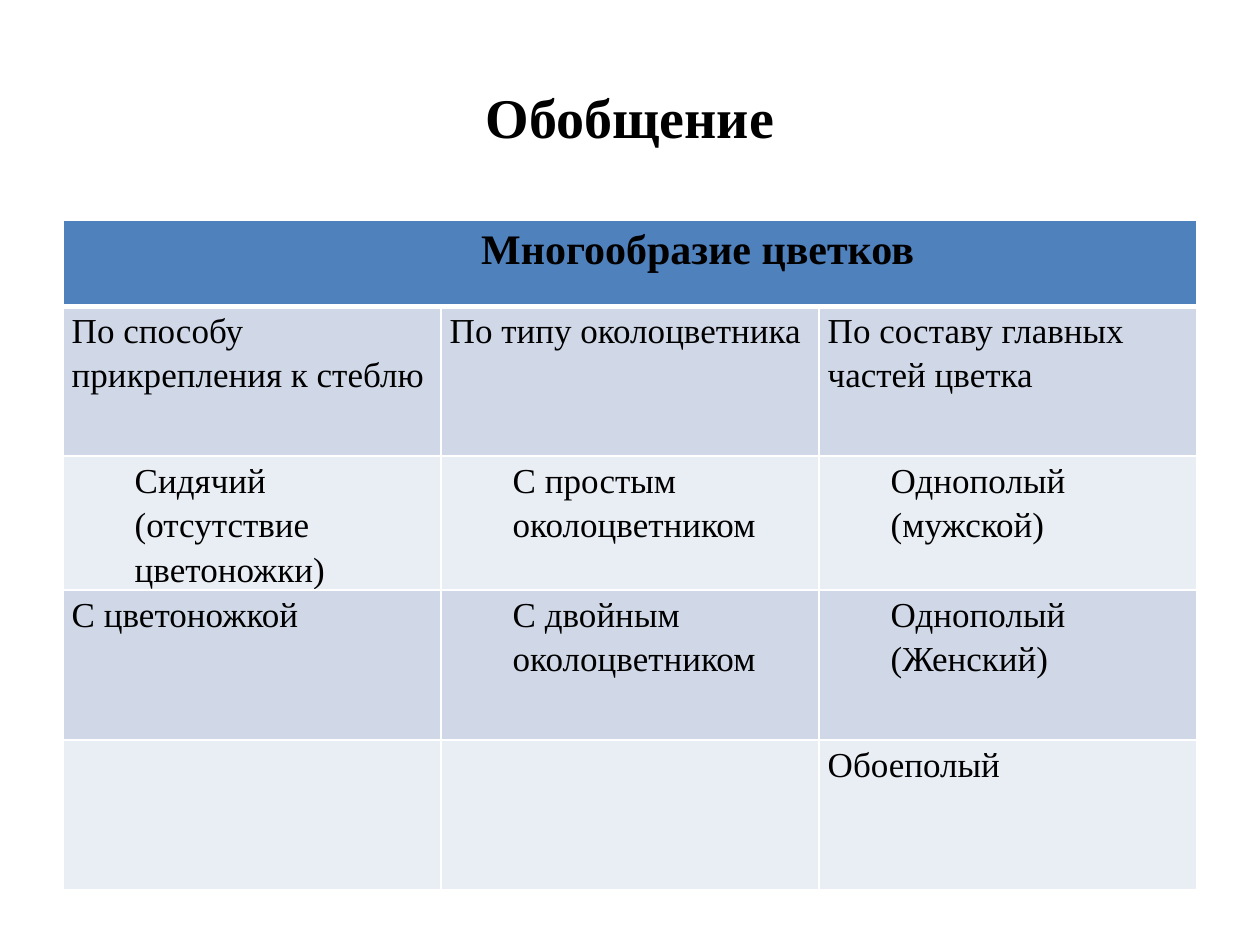
from dataclasses import dataclass

from lxml import etree
from pptx import Presentation
from pptx.dml.color import RGBColor
from pptx.enum.text import MSO_ANCHOR, PP_ALIGN
from pptx.oxml.ns import qn
from pptx.util import Pt

CENTER, JUSTIFY = PP_ALIGN.CENTER, PP_ALIGN.JUSTIFY
MIDDLE = MSO_ANCHOR.MIDDLE
TITLE_ONLY = 5


@dataclass(frozen=True)
class Theme:
    font: str = "Times New Roman"
    title_size: int = 32
    header_size: int = 24
    body_size: int = 20
    text: str = "000000"
    header_fill: str = "4F81BD"
    bands: tuple = ("D0D8E8", "E9EDF4")
    border: str = "FFFFFF"


THEME = Theme()

LEFT, WIDTH = 36, 648
TABLE_TOP = 126
ROW_HEIGHTS = (49, 85.7, 73.4, 85.7, 85.7)
CELL_MARGIN = 5
INDENT = 36
HEADER_FIRST_LINE = 41.3
THIN, THICK = 1, 3

HEADER = "Многообразие цветков"
# Each entry: text, left indent
BODY = (
    (("По способу прикрепления к стеблю", 0),
     ("По типу околоцветника", 0),
     ("По составу главных частей цветка", 0)),
    (("Сидячий (отсутствие цветоножки)", INDENT),
     ("С простым околоцветником", INDENT),
     ("Однополый (мужской)", INDENT)),
    (("С цветоножкой", 0),
     ("С двойным околоцветником", INDENT),
     ("Однополый (Женский)", INDENT)),
    (("", 0), ("", 0), ("Обоеполый", 0)),
)


def style_font(paragraph, size, bold=False):
    font = paragraph.font
    font.name, font.size, font.bold = THEME.font, Pt(size), bold
    font.color.rgb = RGBColor.from_string(THEME.text)


def add_title(slide, text):
    title = slide.shapes.title
    title.left, title.top = Pt(LEFT), Pt(21.6)
    title.width, title.height = Pt(WIDTH), Pt(90)
    title.text_frame.text = text
    title.text_frame.vertical_anchor = MIDDLE
    paragraph = title.text_frame.paragraphs[0]
    paragraph.alignment = CENTER
    style_font(paragraph, THEME.title_size, bold=True)


def set_borders(cell, top, bottom):
    properties = cell._tc.get_or_add_tcPr()
    for side, width in (("L", THIN), ("R", THIN), ("T", top), ("B", bottom)):
        line = etree.SubElement(properties, qn(f"a:ln{side}"), w=str(Pt(width)))
        fill = etree.SubElement(line, qn("a:solidFill"))
        etree.SubElement(fill, qn("a:srgbClr"), val=THEME.border)


def format_cell(cell, color, top=THIN, bottom=THIN):
    cell.margin_left = cell.margin_right = Pt(CELL_MARGIN)
    cell.margin_top = cell.margin_bottom = 0
    set_borders(cell, top, bottom)
    cell.fill.solid()
    cell.fill.fore_color.rgb = RGBColor.from_string(color)


def write_cell(cell, text, size, left=0, first_line=0, bold=False):
    cell.text = text
    paragraph = cell.text_frame.paragraphs[0]
    paragraph.line_spacing = 1.15
    style_font(paragraph, size, bold)
    properties = paragraph._p.get_or_add_pPr()
    properties.set("marL", str(Pt(left)))
    properties.set("indent", str(Pt(first_line)))
    return paragraph


def add_flower_table(slide):
    columns = len(BODY[0])
    table = slide.shapes.add_table(
        len(ROW_HEIGHTS), columns, Pt(LEFT), Pt(TABLE_TOP),
        Pt(WIDTH), Pt(sum(ROW_HEIGHTS))).table
    for row, height in zip(table.rows, ROW_HEIGHTS):
        row.height = Pt(height)

    for column in range(columns):
        format_cell(table.cell(0, column), THEME.header_fill, bottom=THICK)
    header = table.cell(0, 0)
    header.merge(table.cell(0, columns - 1))
    write_cell(header, HEADER, THEME.header_size, INDENT,
               HEADER_FIRST_LINE, bold=True).alignment = CENTER

    for row, entries in enumerate(BODY, start=1):
        band = THEME.bands[(row - 1) % len(THEME.bands)]
        for column, (text, indent) in enumerate(entries):
            cell = table.cell(row, column)
            format_cell(cell, band, top=THICK if row == 1 else THIN)
            if text:
                paragraph = write_cell(cell, text, THEME.body_size, indent)
    paragraph.alignment = JUSTIFY


def main():
    presentation = Presentation()
    presentation.slide_width, presentation.slide_height = Pt(720), Pt(540)
    slide = presentation.slides.add_slide(presentation.slide_layouts[TITLE_ONLY])
    add_title(slide, "Обобщение")
    add_flower_table(slide)
    presentation.save("out.pptx")


if __name__ == "__main__":
    main()
